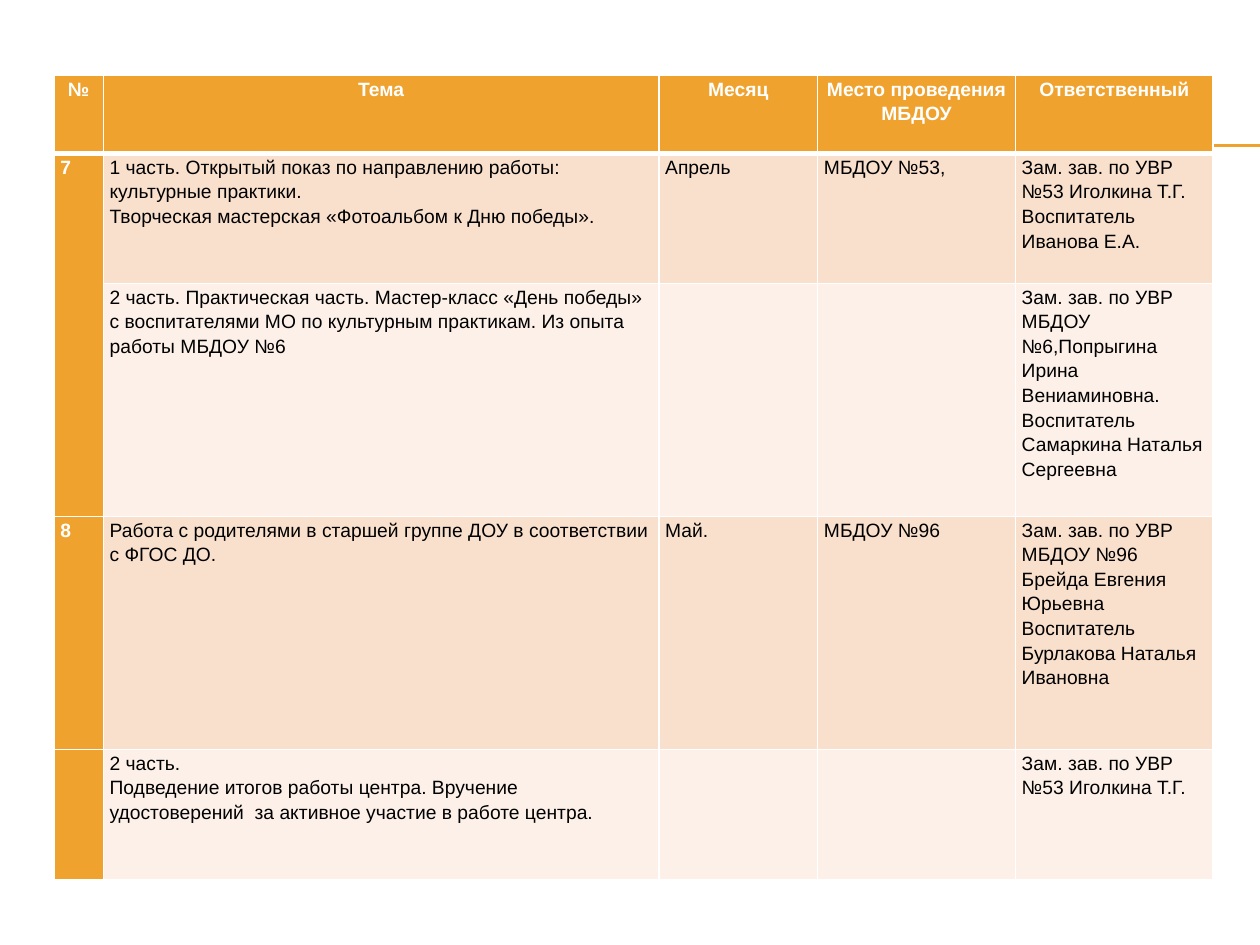
from lxml import etree
from pptx import Presentation, util as u
from pptx.dml.color import RGBColor
from pptx.enum import shapes, text
from pptx.oxml.ns import qn

COLORS = {
    "accent": "F0A22E",
    "band_dark": "F9E0CD",
    "band_light": "FCF0E8",
    "white": "FFFFFF",
    "black": "000000",
}
HEADER = ["№", "Тема", "Месяц", "Место проведения МБДОУ", "Ответственный"]
MEETINGS = [
    ["7",
     "1 часть. Открытый показ по направлению работы: культурные практики.\n"
     "Творческая мастерская «Фотоальбом к Дню победы».",
     "Апрель", "МБДОУ №53,",
     "Зам. зав. по УВР №53 Иголкина Т.Г.\nВоспитатель Иванова Е.А."],
    ["",
     "2 часть. Практическая часть. Мастер-класс «День победы» с воспитателями МО "
     "по культурным практикам. Из опыта работы МБДОУ №6",
     "", "",
     "Зам. зав. по УВР МБДОУ №6,Попрыгина Ирина Вениаминовна.\n"
     "Воспитатель Самаркина Наталья Сергеевна"],
    ["8",
     "Работа с родителями в старшей группе ДОУ в соответствии с ФГОС ДО.",
     "Май.", "МБДОУ №96",
     "Зам. зав. по УВР МБДОУ №96\nБрейда Евгения Юрьевна\n"
     "Воспитатель Бурлакова Наталья Ивановна"],
    ["",
     "2 часть.\nПодведение итогов работы центра. Вручение удостоверений  за активное "
     "участие в работе центра.",
     "", "",
     "Зам. зав. по УВР №53 Иголкина Т.Г."],
]
COLUMN_WIDTHS = [0.39, 4.41, 1.26, 1.57, 1.57]
ROW_HEIGHTS = [0.62, 1.03, 1.85, 1.85, 1.03]
TABLE_LEFT, TABLE_TOP = 0.43, 0.6
RULE_LEFT, RULE_RIGHT, RULE_TOPS = 0.56, 10, [1.15, 1.16]


def color(name):
    return RGBColor.from_string(COLORS[name])


def add_rule(page, top):
    rule = page.shapes.add_connector(
        shapes.MSO_CONNECTOR.STRAIGHT,
        u.Inches(RULE_LEFT), u.Inches(top), u.Inches(RULE_RIGHT), u.Inches(top))
    rule.line.color.rgb = color("accent")
    rule.line.width = u.Pt(0.75)
    etree.SubElement(rule._element.spPr, qn("a:effectLst"))


def set_borders(cell, widths):
    properties = cell._tc.get_or_add_tcPr()
    for position, (side, width) in enumerate(widths.items()):
        line = etree.Element(qn(f"a:ln{side}"), w=str(u.Pt(width)))
        fill = etree.SubElement(line, qn("a:solidFill"))
        etree.SubElement(fill, qn("a:srgbClr"), val=COLORS["white"])
        properties.insert(position, line)


def format_cell(cell, content, row, column):
    heading = row == 0 or column == 0
    band = "band_dark" if row % 2 else "band_light"
    cell.fill.solid()
    cell.fill.fore_color.rgb = color("accent" if heading else band)
    cell.margin_left = cell.margin_right = u.Inches(0.05)
    cell.margin_top = cell.margin_bottom = 0
    set_borders(cell, {"L": 1, "R": 1, "T": 3 if row == 1 else 1, "B": 3 if row == 0 else 1})
    cell.text_frame.text = content
    for para in cell.text_frame.paragraphs:
        para.line_spacing = 1.15
        para.alignment = text.PP_ALIGN.CENTER if row == 0 else text.PP_ALIGN.LEFT
        para.font.name = "Arial"
        para.font.size = u.Pt(11)
        para.font.bold = heading
        para.font.color.rgb = color("white" if heading else "black")


def add_schedule(page):
    rows = [HEADER] + MEETINGS
    table = page.shapes.add_table(
        len(rows), len(HEADER), u.Inches(TABLE_LEFT), u.Inches(TABLE_TOP),
        u.Inches(sum(COLUMN_WIDTHS)), u.Inches(sum(ROW_HEIGHTS))).table
    for column, width in zip(table.columns, COLUMN_WIDTHS):
        column.width = u.Inches(width)
    for row, height in zip(table.rows, ROW_HEIGHTS):
        row.height = u.Inches(height)
    for row, contents in enumerate(rows):
        for column, content in enumerate(contents):
            format_cell(table.cell(row, column), content, row, column)
    table.cell(1, 0).merge(table.cell(2, 0))


def main():
    deck = Presentation()
    deck.slide_width, deck.slide_height = u.Inches(10), u.Inches(7.5)
    page = deck.slides.add_slide(deck.slide_layouts[6])
    for top in RULE_TOPS:
        add_rule(page, top)
    add_schedule(page)
    deck.save("out.pptx")


if __name__ == "__main__":
    main()
